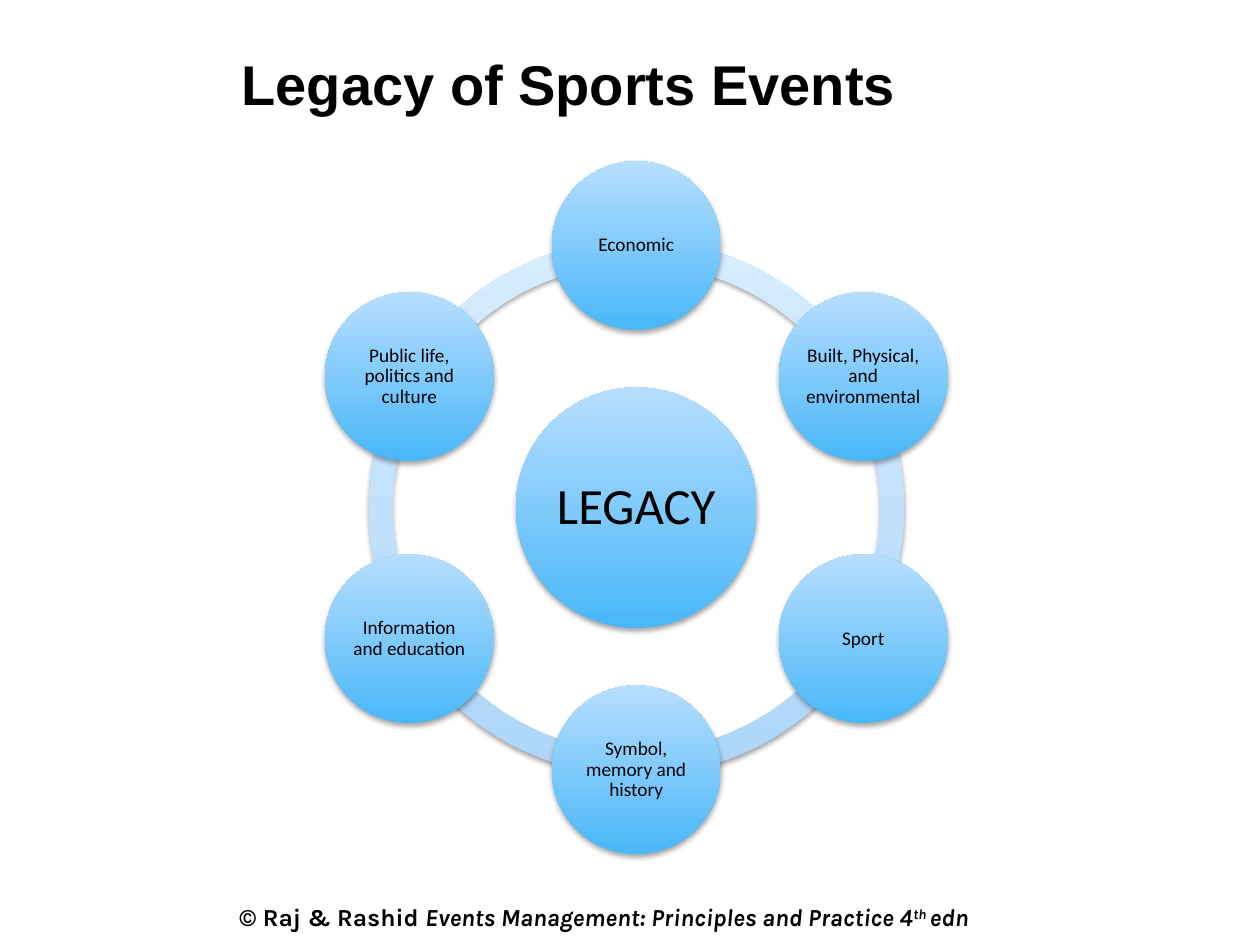
import math
from dataclasses import dataclass

import pptx
import pptx.dml.color
import pptx.enum.shapes
import pptx.enum.text
import pptx.util
from lxml import etree

Inches = pptx.util.Inches
Pt = pptx.util.Pt
MSO_SHAPE = pptx.enum.shapes.MSO_SHAPE
PP_ALIGN = pptx.enum.text.PP_ALIGN
MSO_ANCHOR = pptx.enum.text.MSO_ANCHOR
MSO_AUTO_SIZE = pptx.enum.text.MSO_AUTO_SIZE

CENTER_X, CENTER_Y = 5.05, 4.03
ORBIT = 2.08
RING_SIZE = 4.25
RING_THICKNESS = 0.045
STEP = 60
RING_COLORS = ("ADD6F8", "D7ECFF")
CIRCLE_COLORS = ("49B7F8", "B7DEFF")


@dataclass
class Circle:
    text: str
    x: float
    y: float
    size: float = 1.34
    font_size: float = 11
    inset: float = 0.02


def rgb(value: str):
    return pptx.dml.color.RGBColor.from_string(value)


def add_run(p, text: str, *, size: float, font: str, color: str = "000000",
            bold: bool = False, italic: bool = False, baseline: int = 0):
    r = p.add_run()
    r.text = text
    r.font.size = Pt(size)
    r.font.name = font
    r.font.bold = bold
    r.font.italic = italic
    r.font.color.rgb = rgb(color)
    if baseline:
        r.font._element.set("baseline", str(baseline * 1000))
    return r


def add_shadow(sp) -> None:
    sp.shadow.inherit = False
    effects = sp._element.spPr.find(pptx.oxml.ns.qn("a:effectLst"))
    shadow = etree.SubElement(
        effects, pptx.oxml.ns.qn("a:outerShdw"), blurRad=str(Pt(3.1)),
        dist=str(Pt(1.8)), dir="5400000", rotWithShape="0")
    color = etree.SubElement(shadow, pptx.oxml.ns.qn("a:srgbClr"), val="000000")
    etree.SubElement(color, pptx.oxml.ns.qn("a:alpha"), val="35000")


def add_round(s, kind, x: float, y: float, size: float, colors: tuple[str, str]):
    sp = s.shapes.add_shape(kind, Inches(x - size / 2), Inches(y - size / 2),
                            Inches(size), Inches(size))
    sp.fill.gradient()
    sp.fill.gradient_angle = 90
    for stop, position, color in zip(sp.fill.gradient_stops, (0, 1), colors):
        stop.position = position
        stop.color.rgb = rgb(color)
    sp.line.fill.background()
    add_shadow(sp)
    return sp


def add_arc(s, start: int) -> None:
    sp = add_round(s, MSO_SHAPE.BLOCK_ARC, CENTER_X, CENTER_Y, RING_SIZE, RING_COLORS)
    sp.adjustments[0] = start * 0.6
    sp.adjustments[1] = (start + STEP) % 360 * 0.6
    sp.adjustments[2] = RING_THICKNESS


def add_circle(s, circle: Circle) -> None:
    sp = add_round(s, MSO_SHAPE.OVAL, circle.x, circle.y, circle.size, CIRCLE_COLORS)
    tf = sp.text_frame
    tf.word_wrap = True
    tf.vertical_anchor = MSO_ANCHOR.MIDDLE
    tf.margin_left = tf.margin_right = Inches(circle.inset)
    tf.margin_top = tf.margin_bottom = Inches(circle.inset)
    p = tf.paragraphs[0]
    p.alignment = PP_ALIGN.CENTER
    p.line_spacing = 0.9
    add_run(p, circle.text, size=circle.font_size, font="Calibri")


def add_title(s) -> None:
    tf = s.shapes.add_textbox(Inches(0.5), Inches(0.3), Inches(8.03), Inches(0.82)).text_frame
    tf.word_wrap = True
    tf.margin_top = Inches(0.09)
    p = tf.paragraphs[0]
    p.alignment = PP_ALIGN.CENTER
    add_run(p, "Legacy of Sports Events", size=32, font="Arial", bold=True)


def add_footer(s) -> None:
    tf = s.shapes.add_textbox(Inches(1.8), Inches(7.11), Inches(6.97), Inches(0.34)).text_frame
    tf.word_wrap = False
    tf.auto_size = MSO_AUTO_SIZE.SHAPE_TO_FIT_TEXT
    p = tf.paragraphs[0]
    for text, italic, baseline in (
        ("© Raj & Rashid ", False, 0),
        ("Events Management: Principles and Practice 4", True, 0),
        ("th ", True, 30),
        ("edn", True, 0),
    ):
        add_run(p, text, size=14, font="Karla", bold=True, italic=italic, baseline=baseline)


def main() -> None:
    prs = pptx.Presentation()
    prs.slide_width, prs.slide_height = Inches(10), Inches(7.5)
    s = prs.slides.add_slide(prs.slide_layouts[6])
    add_footer(s)
    add_title(s)
    for start in (210, 150, 90, 30, 330, 270):
        add_arc(s, start)
    add_circle(s, Circle("LEGACY", CENTER_X, CENTER_Y, 1.91, 29, 0.04))
    labels = (
        "Economic",
        "Built, Physical, and environmental",
        "Sport",
        "Symbol, memory and history",
        "Information and education",
        "Public life, politics and culture",
    )
    for i, label in enumerate(labels):
        angle = math.radians(i * STEP - 90)
        add_circle(s, Circle(label, CENTER_X + ORBIT * math.cos(angle),
                             CENTER_Y + ORBIT * math.sin(angle)))
    prs.save("out.pptx")


if __name__ == "__main__":
    main()
